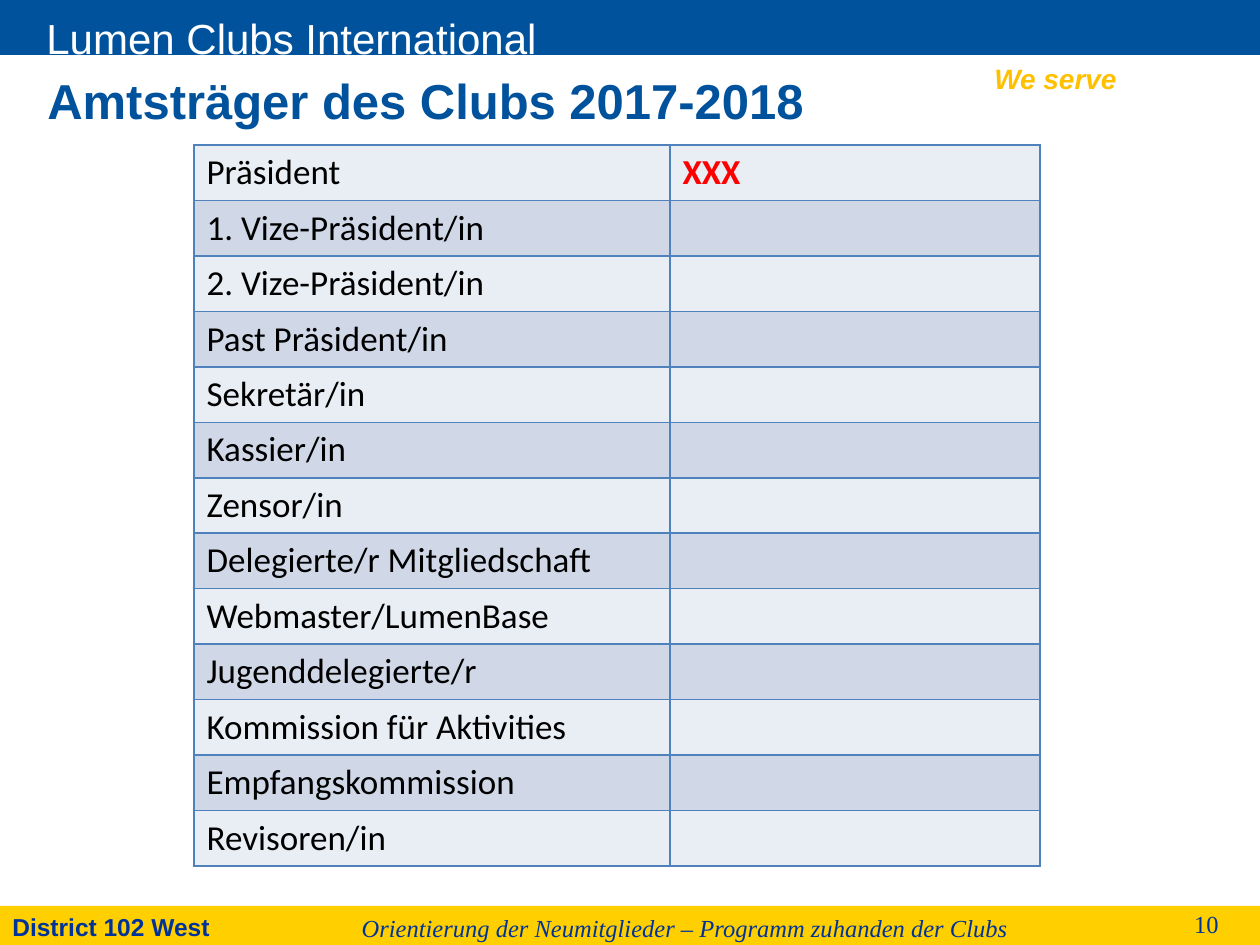
import pptx
import pptx.util
import pptx.dml.color
import pptx.enum.shapes
import pptx.enum.text
import pptx.oxml
import pptx.oxml.ns
from dataclasses import dataclass

ALIGN = pptx.enum.text.PP_ALIGN
ANCHOR = pptx.enum.text.MSO_ANCHOR


@dataclass(frozen=True)
class Theme:
    blue: str = "00529C"
    yellow: str = "FFCF00"
    gold: str = "FFC000"
    navy: str = "003399"
    white: str = "FFFFFF"
    black: str = "000000"
    red: str = "FF0000"
    border: str = "4F81BD"
    bands: tuple = ("E9EDF4", "D0D8E8")
    sans: str = "Arial"
    serif: str = "Times New Roman"
    body: str = "Calibri"
    title: int = 28
    header: int = 24
    cell: int = 20
    motto: int = 16
    footer: int = 14


THEME = Theme()
PAGE_WIDTH, PAGE_HEIGHT = 1260, 945
FOOTER_TOP = 906

BARS = [
    (0, 0, PAGE_WIDTH, 55, THEME.blue),
    (0, FOOTER_TOP, PAGE_WIDTH, PAGE_HEIGHT - FOOTER_TOP, THEME.yellow),
]

LABELS = [
    dict(text="Lumen Clubs International", place=(34, 6, 600, 49),
         size=THEME.header, color=THEME.white),
    dict(text="We serve", place=(982, 55, 149, 47), size=THEME.motto,
         color=THEME.gold, bold=True, italic=True, wrap=False),
    dict(text="District 102 West", place=(0, FOOTER_TOP, 224, 43),
         size=THEME.footer, color=THEME.navy, bold=True, wrap=False),
    dict(text="Orientierung der Neumitglieder – Programm zuhanden der Clubs",
         place=(224, FOOTER_TOP, 922, 43), size=THEME.footer, color=THEME.navy,
         italic=True, face=THEME.serif, align=ALIGN.CENTER, anchor=ANCHOR.MIDDLE),
    dict(text="10", place=(1066, 908, 165, 31), size=THEME.footer,
         color=THEME.navy, face=THEME.serif, align=ALIGN.RIGHT, anchor=ANCHOR.MIDDLE),
    dict(text="Amtsträger des Clubs 2017-2018", place=(35, 75, 947, 50),
         size=THEME.title, color=THEME.blue, bold=True, anchor=ANCHOR.MIDDLE),
]

OFFICERS = [
    ("Präsident", "XXX"),
    ("1. Vize-Präsident/in", ""),
    ("2. Vize-Präsident/in", ""),
    ("Past Präsident/in", ""),
    ("Sekretär/in", ""),
    ("Kassier/in", ""),
    ("Zensor/in", ""),
    ("Delegierte/r Mitgliedschaft", ""),
    ("Webmaster/LumenBase", ""),
    ("Jugenddelegierte/r", ""),
    ("Kommission für Aktivities", ""),
    ("Empfangskommission", ""),
    ("Revisoren/in", ""),
]
TABLE_LEFT, TABLE_TOP, TABLE_HEIGHT = 194, 145, 721
COLUMN_WIDTHS = (476, 370)


def px(length):
    return pptx.util.Emu(round(length * 914400 / 126))


def rgb(color):
    return pptx.dml.color.RGBColor.from_string(color)


def style(para, size, color, face, bold=False, italic=False):
    font = para.font
    font.name, font.size = face, pptx.util.Pt(size)
    font.bold, font.italic = bold, italic
    font.color.rgb = rgb(color)


def add_bar(page, left, top, width, height, color):
    bar = page.shapes.add_shape(pptx.enum.shapes.MSO_SHAPE.RECTANGLE,
                                *map(px, (left, top, width, height)))
    bar.shadow.inherit = False
    bar.fill.solid()
    bar.fill.fore_color.rgb = rgb(color)
    bar.line.fill.background()


def add_label(page, text, place, size, color, face=THEME.sans, bold=False,
              italic=False, wrap=True, align=ALIGN.LEFT, anchor=ANCHOR.TOP):
    frame = page.shapes.add_textbox(*map(px, place)).text_frame
    frame.word_wrap = wrap
    frame.vertical_anchor = anchor
    para = frame.paragraphs[0]
    para.text, para.alignment = text, align
    style(para, size, color, face, bold, italic)


def add_borders(cell):
    properties = cell._tc.get_or_add_tcPr()
    for side in ("lnL", "lnR", "lnT", "lnB"):
        properties.append(pptx.oxml.parse_xml(
            f'<a:{side} {pptx.oxml.ns.nsdecls("a")} w="12700"><a:solidFill>'
            f'<a:srgbClr val="{THEME.border}"/></a:solidFill></a:{side}>'))


def add_officers(page):
    table = page.shapes.add_table(
        len(OFFICERS), len(COLUMN_WIDTHS), px(TABLE_LEFT), px(TABLE_TOP),
        px(sum(COLUMN_WIDTHS)), px(TABLE_HEIGHT)).table
    table.first_row = table.horz_banding = False
    for column, width in zip(table.columns, COLUMN_WIDTHS):
        column.width = px(width)
    for index, officer in enumerate(OFFICERS):
        table.rows[index].height = px(TABLE_HEIGHT / len(OFFICERS))
        for position, text in enumerate(officer):
            cell = table.cell(index, position)
            add_borders(cell)
            cell.fill.solid()
            cell.fill.fore_color.rgb = rgb(THEME.bands[index % 2])
            para = cell.text_frame.paragraphs[0]
            para.text = text
            is_name = position == 1
            style(para, THEME.cell, THEME.red if is_name else THEME.black,
                  THEME.body, bold=is_name)


def main():
    deck = pptx.Presentation()
    deck.slide_width, deck.slide_height = px(PAGE_WIDTH), px(PAGE_HEIGHT)
    page = deck.slides.add_slide(deck.slide_layouts[6])
    for bar in BARS:
        add_bar(page, *bar)
    for label in LABELS:
        add_label(page, **label)
    add_officers(page)
    deck.save("out.pptx")


if __name__ == "__main__":
    main()
